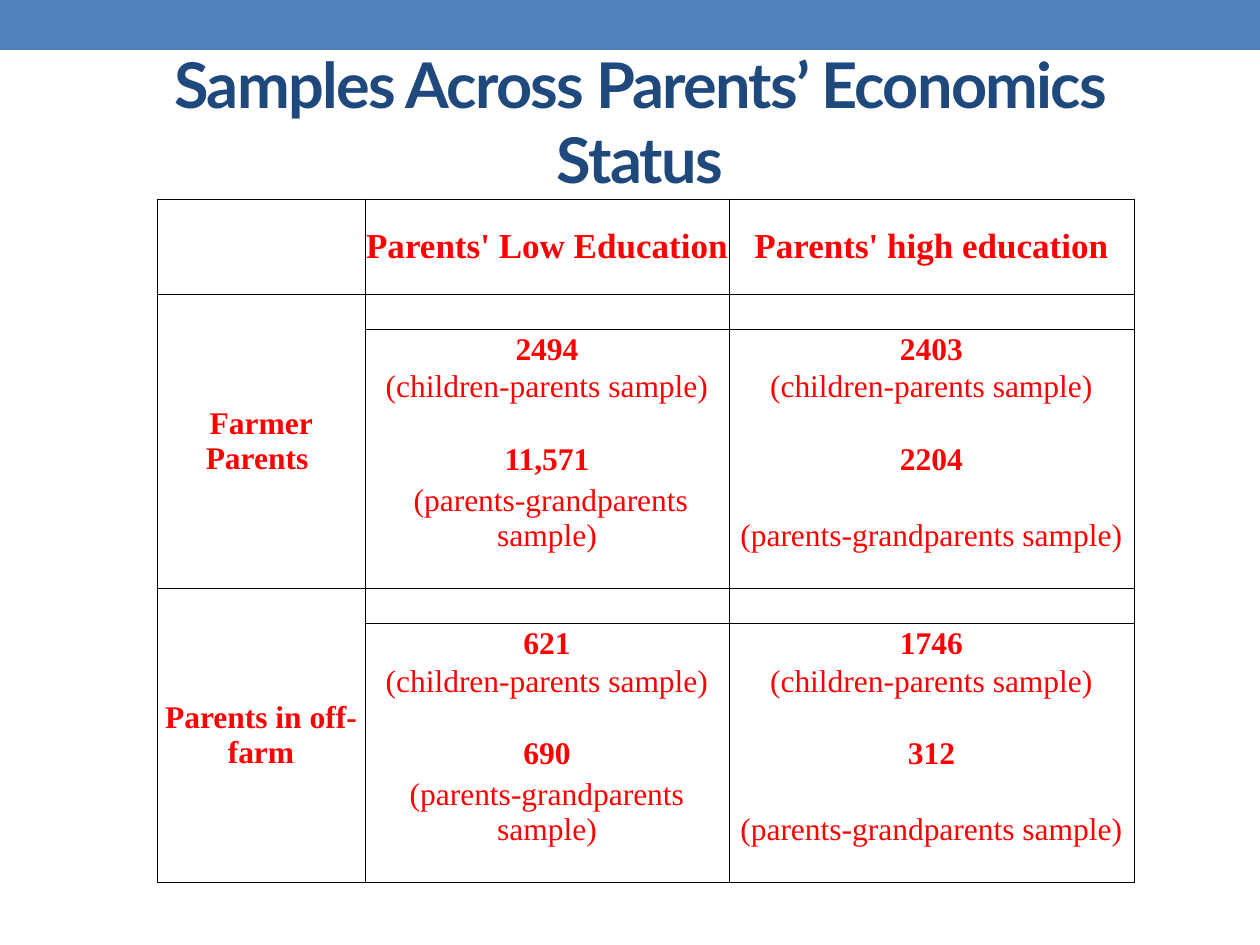
import dataclasses
import typing

import lxml.etree
import pptx
import pptx.dml.color
import pptx.enum.shapes
import pptx.enum.text
import pptx.oxml.ns
import pptx.util

EMU_PER_PX = 914400 / 126
NO_GRID_STYLE = "{2D5ABB26-0587-4C30-8999-92F81FD0307C}"


@dataclasses.dataclass(frozen=True)
class Theme:
    band: str = "4F81BD"
    title: str = "1F497D"
    table_text: str = "FF0000"
    border: str = "000000"
    title_font: str = "Lato"
    table_font: str = "Times New Roman"
    title_size: int = 36
    header_size: int = 20
    body_size: int = 18
    empty_size: int = 12
    border_width: float = 0.5


@dataclasses.dataclass(frozen=True)
class Sample:
    children: str
    grandparents: str
    grandparents_label: str = "(parents-grandparents sample)"

    def lines(self) -> list[str]:
        return ["", self.children, "(children-parents sample)", "",
                self.grandparents, self.grandparents_label, ""]


@dataclasses.dataclass(frozen=True)
class Group:
    name: str
    samples: tuple[Sample, Sample]


THEME = Theme()
HEADERS = ("", "Parents' Low Education", "Parents' high education")
GROUPS = (
    Group("Farmer Parents ", (
        Sample("2494", "11,571", " (parents-grandparents sample)"),
        Sample("2403", "2204"))),
    Group("Parents in off-farm", (Sample("621", "690"), Sample("1746", "312"))),
)
LINES_PER_GROUP = 7
COLUMN_WIDTHS = (208, 364, 405)
HEADER_HEIGHT, LINE_HEIGHT = 95, 35
MIDDLE = pptx.enum.text.MSO_ANCHOR.MIDDLE
BOTTOM = pptx.enum.text.MSO_ANCHOR.BOTTOM


def px(length: int) -> pptx.util.Emu:
    return pptx.util.Emu(round(length * EMU_PER_PX))


def rgb(color: str) -> pptx.dml.color.RGBColor:
    return pptx.dml.color.RGBColor.from_string(color)


def style_para(para: typing.Any, font: str, size: int, color: str, bold: bool) -> None:
    para.alignment = pptx.enum.text.PP_ALIGN.CENTER
    para.font.name = font
    para.font.size = pptx.util.Pt(size)
    para.font.bold = bold
    para.font.color.rgb = rgb(color)


def draw_band(page: typing.Any) -> None:
    band = page.shapes.add_shape(
        pptx.enum.shapes.MSO_SHAPE.RECTANGLE, 0, 0, px(1260), px(50))
    band.shadow.inherit = False
    band.fill.solid()
    band.fill.fore_color.rgb = rgb(THEME.band)
    band.line.fill.background()


def draw_title(page: typing.Any, text: str) -> None:
    box = page.shapes.add_textbox(px(73), px(53), px(1134), px(136))
    frame = box.text_frame
    frame.word_wrap = True
    frame.vertical_anchor = MIDDLE
    frame.margin_left = frame.margin_right = px(25)
    frame.margin_top = frame.margin_bottom = 0
    para = frame.paragraphs[0]
    span = para.add_run()
    span.text = text
    style_para(para, THEME.title_font, THEME.title_size, THEME.title, True)
    span.font._element.set("spc", "-100")  # tighten letters by one point


def set_borders(cell: typing.Any, sides: str) -> None:
    properties = cell._tc.get_or_add_tcPr()
    qn = pptx.oxml.ns.qn
    for side in sides:
        line = lxml.etree.SubElement(
            properties, qn(f"a:ln{side}"), w=str(pptx.util.Pt(THEME.border_width)))
        fill = lxml.etree.SubElement(line, qn("a:solidFill"))
        lxml.etree.SubElement(fill, qn("a:srgbClr"), val=THEME.border)


def fill_cell(cell: typing.Any, text: str, size: int, bold: bool,
              anchor: typing.Any, sides: str) -> None:
    set_borders(cell, sides)
    cell.fill.background()
    cell.margin_left = cell.margin_right = cell.margin_top = cell.margin_bottom = 0
    cell.vertical_anchor = anchor
    para = cell.text_frame.paragraphs[0]
    if text:
        para.add_run().text = text
    else:
        # Keep empty cells from stretching their row
        size = THEME.empty_size
        para._p.get_or_add_endParaRPr().set("sz", str(size * 100))
    style_para(para, THEME.table_font, size, THEME.table_text, bold)


def draw_group(table: typing.Any, group: Group, first: int) -> None:
    last = first + LINES_PER_GROUP - 1
    table.cell(first, 0).merge(table.cell(last, 0))
    columns = [[group.name] + [""] * (LINES_PER_GROUP - 1)]
    columns += [sample.lines() for sample in group.samples]
    for column, lines in enumerate(columns):
        for offset, text in enumerate(lines):
            row = first + offset
            sides = "LR" + "T" * (row == first) + "B" * (row == last)
            if column == 0 and row == first:
                sides = "LRTB"
            anchor = MIDDLE if column == 0 else BOTTOM
            fill_cell(table.cell(row, column), text, THEME.body_size,
                      not text.strip().startswith("("), anchor, sides)


def draw_table(page: typing.Any) -> None:
    line_count = LINES_PER_GROUP * len(GROUPS)
    frame = page.shapes.add_table(
        line_count + 1, len(HEADERS), px(157), px(199),
        px(sum(COLUMN_WIDTHS)), px(HEADER_HEIGHT + LINE_HEIGHT * line_count))
    table = frame.table
    table.first_row = table.horz_banding = False
    table._tbl.tblPr.find(pptx.oxml.ns.qn("a:tableStyleId")).text = NO_GRID_STYLE
    for column, width in zip(table.columns, COLUMN_WIDTHS):
        column.width = px(width)
    for index, row in enumerate(table.rows):
        row.height = px(LINE_HEIGHT if index else HEADER_HEIGHT)
    for column, text in enumerate(HEADERS):
        fill_cell(table.cell(0, column), text, THEME.header_size, True, MIDDLE, "LRTB")
    for index, group in enumerate(GROUPS):
        draw_group(table, group, 1 + index * LINES_PER_GROUP)


def main() -> None:
    deck = pptx.Presentation()
    deck.slide_width, deck.slide_height = px(1260), px(945)
    page = deck.slides.add_slide(deck.slide_layouts[6])
    draw_band(page)
    draw_title(page, "Samples Across Parents’ Economics Status")
    draw_table(page)
    deck.save("out.pptx")


if __name__ == "__main__":
    main()
